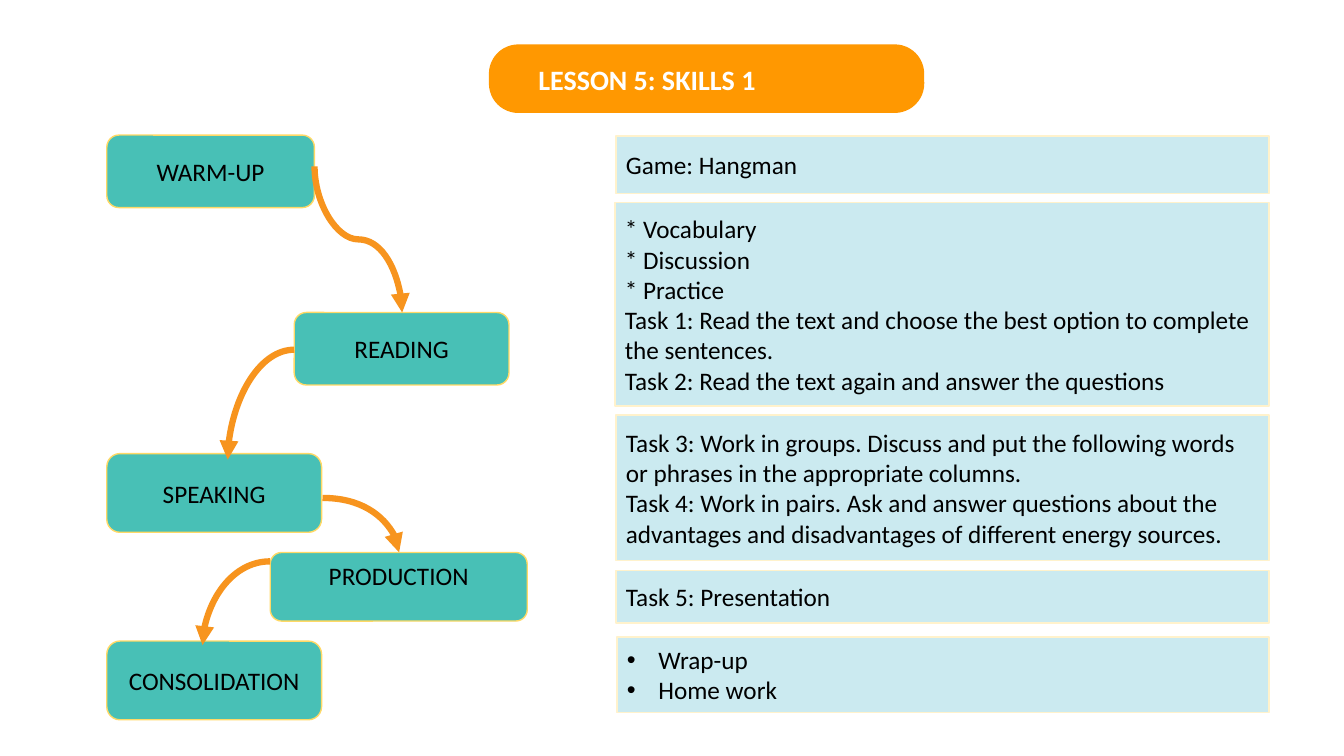
from dataclasses import dataclass

from lxml import etree
from pptx import Presentation
from pptx import util as u
from pptx.dml.color import RGBColor
from pptx.enum import shapes, text
from pptx.oxml import ns

COLOURS = {
    "teal": "48C0B6", "gold": "FFD966", "ice": "CBEAF0", "cream": "FFF2CC",
    "arrow": "F7941E", "orange": "FF9801", "black": "000000", "white": "FFFFFF",
}
BODY_FONT = {"name": "Calibri", "size": u.Pt(18), "bold": False}
TITLE_FONT = {"name": "Calibri", "size": u.Pt(20), "bold": True}
MIDDLE, TOP = text.MSO_ANCHOR.MIDDLE, text.MSO_ANCHOR.TOP
LEFT, CENTER = text.PP_ALIGN.LEFT, text.PP_ALIGN.CENTER


@dataclass
class Box:
    left: float
    top: float
    width: float
    height: float
    lines: tuple[str, ...] = ()
    anchor: int = MIDDLE


@dataclass
class Arrow:
    start: tuple[float, float]
    end: tuple[float, float]
    preset: str = "curvedConnector2"
    rotation: int = 0


STAGES = [
    Box(76.3, 96.5, 148.3, 51.8, ("WARM-UP",)),
    Box(210.2, 223.2, 153.4, 51.8, ("READING",)),
    Box(76.3, 324, 153.4, 56.2, ("SPEAKING",)),
    Box(193, 394.6, 183.6, 49, ("PRODUCTION",), TOP),
    Box(76.3, 457.9, 153.4, 56.2, ("CONSOLIDATION",)),
]
PANELS = [
    Box(440, 97.2, 466.6, 41, ("Game: Hangman",)),
    Box(439.2, 144.7, 467.3, 145.4, (
        "* Vocabulary", "* Discussion", "* Practice",
        "Task 1: Read the text and choose the best option to complete the sentences.",
        "Task 2: Read the text again and answer the questions")),
    Box(440, 296.6, 466.6, 103.7, (
        "Task 3: Work in groups. Discuss and put the following words or phrases "
        "in the appropriate columns.",
        "Task 4: Work in pairs. Ask and answer questions about the advantages "
        "and disadvantages of different energy sources.")),
    Box(440, 407.5, 466.6, 37.4, ("Task 5: Presentation",)),
]
WRAP_UP = Box(440.6, 455, 465.8, 54, ("Wrap-up", "Home work"))
BANNER = Box(349.2, 31.7, 311, 49)
TITLE = Box(377.3, 41, 283, 31.7, ("LESSON 5: SKILLS 1",), TOP)
ARROWS = [
    # A quarter turn makes the first curve leave its stage downwards
    Arrow((308.2, 139.7), (203.8, 202.3), "curvedConnector3", 270),
    Arrow((210.2, 249.8), (162.7, 328.3)),
    Arrow((230.4, 355.7), (285.1, 394.6)),
    Arrow((193, 401), (144.7, 460.8)),
]


def rgb(name: str) -> RGBColor:
    return RGBColor.from_string(COLOURS[name])


def apply(target, values: dict) -> None:
    for name, value in values.items():
        setattr(target, name, value)


def place(shape, box: Box) -> None:
    apply(shape, {name: u.Pt(getattr(box, name))
                  for name in ("left", "top", "width", "height")})


def paint(shape, fill: str, line: str | None) -> None:
    shape.fill.solid()
    shape.fill.fore_color.rgb = rgb(fill)
    if line:
        shape.line.color.rgb = rgb(line)
        shape.line.width = u.Pt(1)
    else:
        shape.line.fill.background()


def write(shape, box: Box, align: int, font: dict, colour: str = "black") -> None:
    frame = shape.text_frame
    frame.text = "\n".join(box.lines)
    apply(frame, {"word_wrap": True, "auto_size": text.MSO_AUTO_SIZE.NONE,
                  "vertical_anchor": box.anchor})
    for paragraph in frame.paragraphs:
        apply(paragraph, {"alignment": align, "space_before": u.Pt(0)})
        for run in paragraph.runs:
            apply(run.font, font)
            run.font.color.rgb = rgb(colour)


def add_box(slide, box: Box, kind: int, fill: str, line: str | None, align: int):
    shape = slide.shapes.add_shape(kind, 0, 0, 0, 0)
    place(shape, box)
    shape.shadow.inherit = False
    paint(shape, fill, line)
    if box.lines:
        write(shape, box, align, BODY_FONT)
    return shape


def add_bullets(shape, indent: float) -> None:
    for paragraph in shape.text_frame.paragraphs:
        properties = paragraph._p.get_or_add_pPr()
        properties.set("marL", str(u.Pt(indent)))
        properties.set("indent", str(-u.Pt(indent)))
        etree.SubElement(properties, ns.qn("a:buFont"), typeface="Arial")
        etree.SubElement(properties, ns.qn("a:buChar"), char="•")


def add_arrow(slide, arrow: Arrow) -> None:
    points = [u.Pt(value) for value in arrow.start + arrow.end]
    connector = slide.shapes.add_connector(shapes.MSO_CONNECTOR.CURVE, *points)
    connector.line.color.rgb = rgb("arrow")
    connector.line.width = u.Pt(4.5)
    properties = connector.element.spPr
    properties.find(ns.qn("a:prstGeom")).set("prst", arrow.preset)
    if arrow.rotation:
        properties.find(ns.qn("a:xfrm")).set("rot", str(arrow.rotation * 60000))
    etree.SubElement(properties.find(ns.qn("a:ln")), ns.qn("a:tailEnd"), type="triangle")
    etree.SubElement(properties, ns.qn("a:effectLst"))


def main() -> None:
    presentation = Presentation()
    apply(presentation, {"slide_width": u.Pt(960), "slide_height": u.Pt(540)})
    slide = presentation.slides.add_slide(presentation.slide_layouts[1])
    title, wrap_up = slide.placeholders

    # Lesson stages and the arrows between them
    rounded = shapes.MSO_SHAPE.ROUNDED_RECTANGLE
    for stage in STAGES:
        add_box(slide, stage, rounded, "teal", "gold", CENTER)
    for arrow in ARROWS:
        add_arrow(slide, arrow)

    # Activities of each stage
    for panel in PANELS:
        add_box(slide, panel, shapes.MSO_SHAPE.RECTANGLE, "ice", "cream", LEFT)
    place(wrap_up, WRAP_UP)
    paint(wrap_up, "ice", "cream")
    write(wrap_up, WRAP_UP, LEFT, BODY_FONT)
    add_bullets(wrap_up, 22.5)

    # Title in front of its banner
    banner = add_box(slide, BANNER, rounded, "orange", None, LEFT)
    banner.adjustments[0] = 0.43
    place(title, TITLE)
    write(title, TITLE, LEFT, TITLE_FONT, "white")
    banner.element.addnext(title.element)

    presentation.save("out.pptx")


if __name__ == "__main__":
    main()
